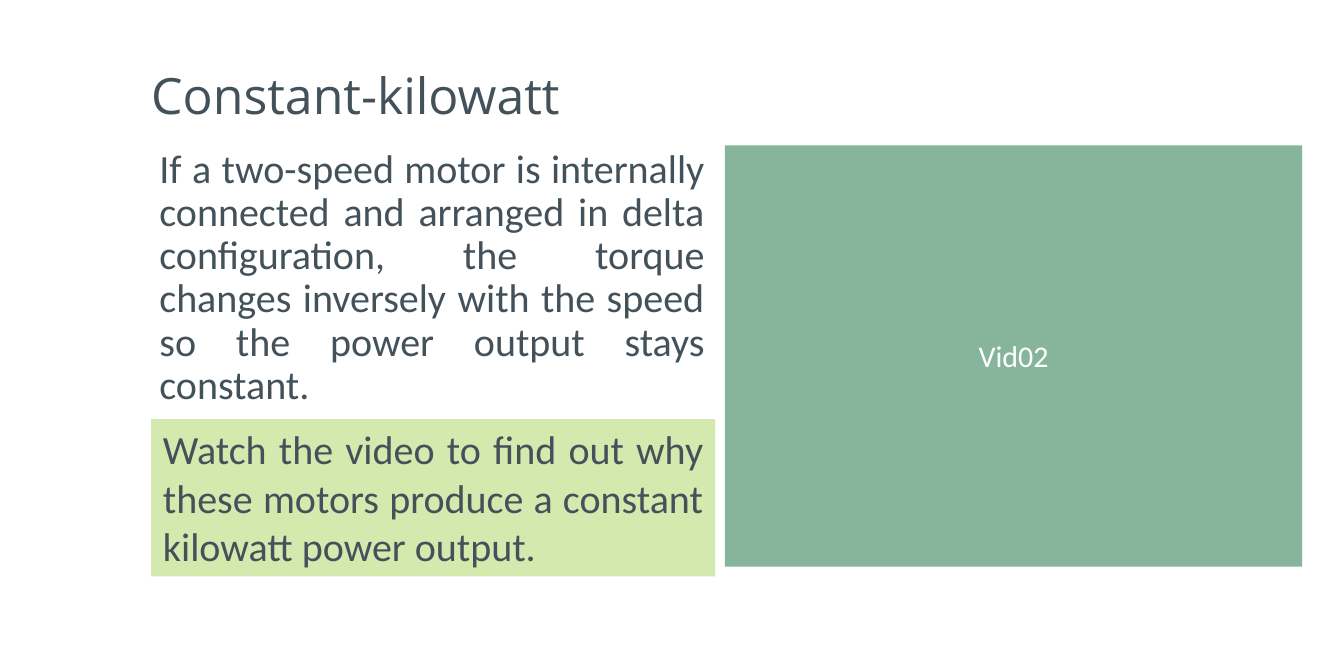
from pptx import Presentation
from pptx import util as u
from pptx.dml.color import RGBColor
from pptx.enum import shapes, text

COLORS = {"ink": "43525A", "video": "86B59C", "prompt": "D3E9AD", "white": "FFFFFF"}
ALIGN, ANCHOR = text.PP_ALIGN, text.MSO_ANCHOR

presentation = Presentation()
presentation.slide_width = u.Pt(806.25)
presentation.slide_height = u.Pt(394)
slide = presentation.slides.add_slide(presentation.slide_layouts[5])


def place(*lengths):
    return [u.Inches(length) for length in lengths]


def write(shape, words, size, font, color, frame_format, paragraph_format):
    frame = shape.text_frame
    frame.text = words
    paragraph = frame.paragraphs[0]
    font_format = {"size": u.Pt(size), "name": font}
    for target, values in (
        (frame, {"word_wrap": True, **frame_format}),
        (paragraph, paragraph_format),
        (paragraph.runs[0].font, font_format),
    ):
        for name, value in values.items():
            setattr(target, name, value)
    paragraph.runs[0].font.color.rgb = RGBColor.from_string(COLORS[color])


title = slide.shapes.title
title.left, title.top, title.width, title.height = place(1.16, 0.29, 8.39, 1.06)
write(title, "Constant-kilowatt", 30, "Open Sans", "ink",
      {"vertical_anchor": ANCHOR.MIDDLE, "auto_size": text.MSO_AUTO_SIZE.NONE},
      {"alignment": ALIGN.LEFT, "line_spacing": 0.9})

explanation = slide.shapes.add_textbox(*place(1.23, 1.19, 4.74, 2.23))
write(explanation,
      "If a two-speed motor is internally connected and arranged in delta "
      "configuration, the torque changes inversely with the speed so the "
      "power output stays constant.",
      24, "Calibri", "ink", {"vertical_anchor": ANCHOR.TOP},
      {"alignment": ALIGN.JUSTIFY, "line_spacing": 0.9, "space_before": u.Pt(7.3)})

panels = [
    ("video", (6.04, 1.21, 4.81, 3.51), "Vid02", 18, "white",
     {"vertical_anchor": ANCHOR.MIDDLE}, ALIGN.CENTER),
    ("prompt", (1.26, 3.49, 4.7, 1.31),
     "Watch the video to find out why these motors produce a constant "
     "kilowatt power output.", 24, "ink",
     {"vertical_anchor": ANCHOR.TOP,
      "auto_size": text.MSO_AUTO_SIZE.SHAPE_TO_FIT_TEXT}, ALIGN.JUSTIFY),
]
for fill, box, words, size, color, frame_format, alignment in panels:
    panel = slide.shapes.add_shape(shapes.MSO_SHAPE.RECTANGLE, *place(*box))
    panel.shadow.inherit = False
    panel.fill.solid()
    panel.fill.fore_color.rgb = RGBColor.from_string(COLORS[fill])
    panel.line.fill.background()
    write(panel, words, size, "Calibri", color, frame_format, {"alignment": alignment})

presentation.save("out.pptx")
